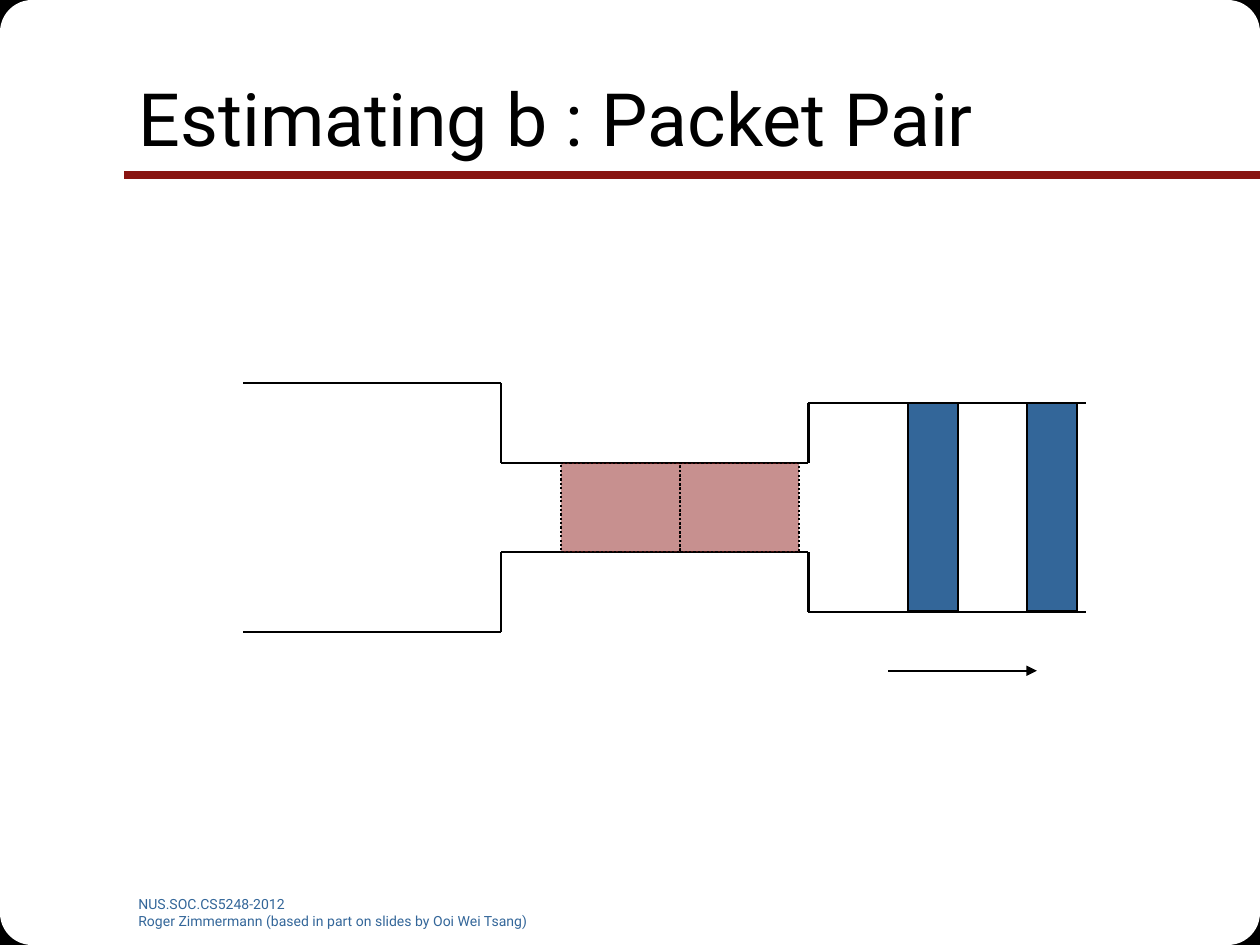
import itertools
from dataclasses import dataclass

import lxml.etree
import pptx
import pptx.dml.color
import pptx.enum.dml
import pptx.enum.shapes
import pptx.enum.text
import pptx.oxml.ns
import pptx.util

Pt = pptx.util.Pt
qn = pptx.oxml.ns.qn
SHAPE = pptx.enum.shapes.MSO_SHAPE
WIDTH, HEIGHT = 720, 540


@dataclass(frozen=True)
class Theme:
    font: str = "Roboto"
    ink: str = "000000"
    paper: str = "FFFFFF"
    accent: str = "891411"
    blue: str = "336699"
    title_size: float = 42
    footer_size: float = 8
    thin: float = 0.75
    stroke: float = 1.25
    rule: float = 4.5


def rgb(value):
    return pptx.dml.color.RGBColor.from_string(value)


def write_text(tf, text, *, font, size, color, anchor):
    """Fill a text frame, one left-aligned paragraph per line of text."""
    tf.word_wrap = True
    tf.auto_size = pptx.enum.text.MSO_AUTO_SIZE.NONE
    tf.vertical_anchor = anchor
    for i, line in enumerate(text.split("\n")):
        p = tf.add_paragraph() if i else tf.paragraphs[0]
        p.alignment = pptx.enum.text.PP_ALIGN.LEFT
        r = p.add_run()
        r.text = line
        r.font.name = font
        r.font.size = Pt(size)
        r.font.color.rgb = rgb(color)


class SlideBuilder:
    def __init__(self, prs, theme):
        self.theme = theme
        self.slide = prs.slides.add_slide(prs.slide_layouts[5])
        fill = self.slide.background.fill
        fill.solid()
        fill.fore_color.rgb = rgb(theme.paper)

    def title(self, text, x, y, w, h):
        """Format the title and bring it in front of what is already drawn."""
        sp = self.slide.shapes.title
        sp._element.getparent().append(sp._element)
        sp.left, sp.top, sp.width, sp.height = map(Pt, (x, y, w, h))
        write_text(sp.text_frame, text, font=self.theme.font,
                   size=self.theme.title_size, color=self.theme.ink,
                   anchor=pptx.enum.text.MSO_ANCHOR.MIDDLE)

    def footer(self, text, x, y, w, h):
        sp = self.slide.shapes.add_textbox(*map(Pt, (x, y, w, h)))
        write_text(sp.text_frame, text, font=self.theme.font,
                   size=self.theme.footer_size, color=self.theme.blue,
                   anchor=pptx.enum.text.MSO_ANCHOR.TOP)

    def box(self, x, y, w, h, fill, kind=SHAPE.RECTANGLE, line_width=None,
            dash=None, opacity=None):
        sp = self.slide.shapes.add_shape(kind, *map(Pt, (x, y, w, h)))
        sp.shadow.inherit = False
        sp.fill.solid()
        sp.fill.fore_color.rgb = rgb(fill)
        if opacity is not None:
            color = sp.fill._xPr.find(qn("a:solidFill"))[0]
            lxml.etree.SubElement(color, qn("a:alpha"), val=str(opacity * 1000))
        if line_width is None:
            sp.line.fill.background()
        else:
            sp.line.color.rgb = rgb(self.theme.ink)
            sp.line.width = Pt(line_width)
            sp.line.dash_style = dash

    def line(self, start, end, color=None, width=None, arrow=False):
        sp = self.slide.shapes.add_connector(
            pptx.enum.shapes.MSO_CONNECTOR.STRAIGHT, *map(Pt, (*start, *end)))
        sp.line.color.rgb = rgb(color or self.theme.ink)
        sp.line.width = Pt(width or self.theme.stroke)
        if arrow:
            lxml.etree.SubElement(sp.line._ln, qn("a:tailEnd"), type="triangle")
        lxml.etree.SubElement(sp._element.spPr, qn("a:effectLst"))

    def polyline(self, points):
        for start, end in itertools.pairwise(points):
            self.line(start, end)

    def rounded_frame(self):
        """Black corners, covered by white rounded squares."""
        for size, fill, kind, line_width in (
                (31, self.theme.ink, SHAPE.RECTANGLE, self.theme.thin),
                (110, self.theme.paper, SHAPE.ROUNDED_RECTANGLE, None)):
            for x, y in itertools.product((0, WIDTH - size), (0, HEIGHT - size)):
                self.box(x, y, size, size, fill, kind, line_width)


def main():
    prs = pptx.Presentation()
    prs.slide_width, prs.slide_height = Pt(WIDTH), Pt(HEIGHT)
    theme = Theme()
    s = SlideBuilder(prs, theme)

    s.rounded_frame()
    s.line((WIDTH, 100), (70.8, 100), theme.accent, theme.rule)
    s.footer("NUS.SOC.CS5248-2012\n"
             "Roger Zimmermann (based in part on slides by Ooi Wei Tsang)",
             72, 508.3, 258, 20)
    s.title("Estimating b : Packet Pair", 72, 21.9, 612, 90)

    # Pipe sections from left to right: wide, bottleneck, medium
    axis = 290
    edges = (139, 286.5, 462, 620.8)
    wide, narrow, medium = half_heights = (71, 25.5, 59.5)
    for side in (-1, 1):
        s.polyline([(x, axis + side * half)
                    for ends, half in zip(itertools.pairwise(edges), half_heights)
                    for x in ends])
    s.line((507.5, 383.3), (592.5, 383.3), arrow=True)

    for x in (587, 519):
        s.box(x, axis - medium, 28.3, 2 * medium, theme.blue,
              line_width=theme.stroke)
    for x in (388.5, 320.5):
        s.box(x, axis - narrow, 68, 2 * narrow, theme.accent,
              line_width=theme.stroke, opacity=47,
              dash=pptx.enum.dml.MSO_LINE.ROUND_DOT)

    prs.save("out.pptx")


if __name__ == "__main__":
    main()
